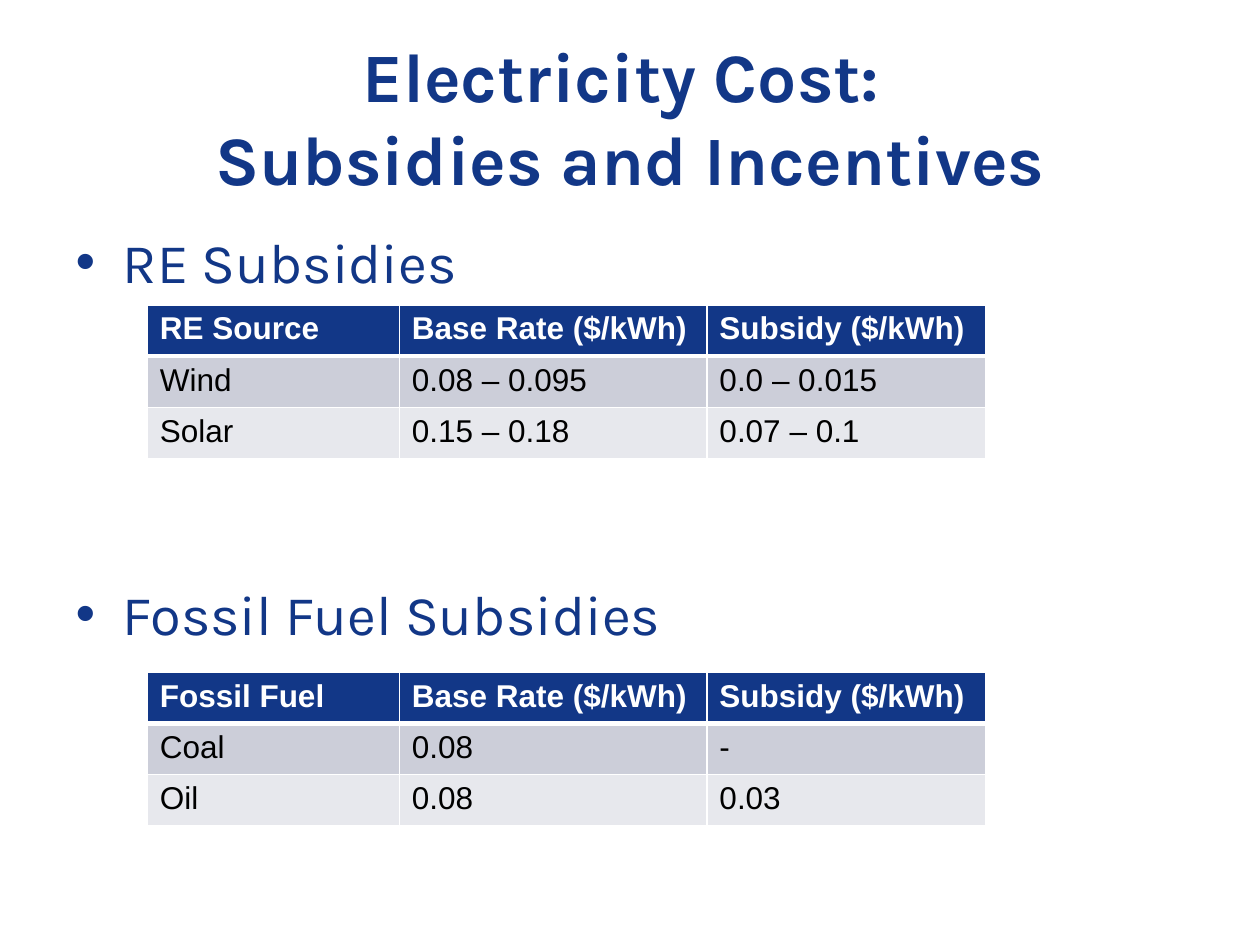
from lxml import etree
from pptx import Presentation
from pptx.dml.color import RGBColor
from pptx.enum.text import MSO_ANCHOR, MSO_AUTO_SIZE, PP_ALIGN
from pptx.oxml.ns import qn
from pptx.util import Cm, Pt

CENTER = PP_ALIGN.CENTER
LEFT = PP_ALIGN.LEFT
MIDDLE = MSO_ANCHOR.MIDDLE
TOP = MSO_ANCHOR.TOP
NO_AUTOFIT = MSO_AUTO_SIZE.NONE

NAVY = RGBColor(0x12, 0x37, 0x87)
WHITE = RGBColor(0xFF, 0xFF, 0xFF)
BLACK = RGBColor(0x00, 0x00, 0x00)
DARK_BAND = RGBColor(0xCC, 0xCE, 0xD9)
LIGHT_BAND = RGBColor(0xE7, 0xE8, 0xED)

HEADING_FONT = "Karla"
TABLE_FONT = "Arial"

COLUMN_WIDTHS = (Cm(5.08), Cm(6.2), Cm(5.63))
ROW_HEIGHT = Cm(1.03)
TABLE_LEFT = Cm(2.97)
BULLET_INDENT = Cm(0.95)
SECTION_GAP = Pt(157)

RATE_HEADINGS = ("Base Rate ($/kWh)", "Subsidy ($/kWh)")
RENEWABLE_RATES = (
    ("RE Source", *RATE_HEADINGS),
    ("Wind", "0.08 – 0.095", "0.0 – 0.015"),
    ("Solar", "0.15 – 0.18", "0.07 – 0.1"),
)
FOSSIL_RATES = (
    ("Fossil Fuel", *RATE_HEADINGS),
    ("Coal", "0.08", "-"),
    ("Oil", "0.08", "0.03"),
)


def write_text(paragraph, text, font, size, color, bold=False, align=LEFT,
               before=Pt(0), after=Pt(0)):
    paragraph.text = text
    paragraph.alignment = align
    paragraph.space_before = before
    paragraph.space_after = after
    for run in paragraph.runs:
        run.font.name = font
        run.font.size = Pt(size)
        run.font.color.rgb = color
        run.font.bold = bold


def place(placeholder, left, top, width, height, anchor):
    """Move a placeholder and return its prepared text frame."""
    placeholder.left, placeholder.top = left, top
    placeholder.width, placeholder.height = width, height
    frame = placeholder.text_frame
    frame.word_wrap = True
    frame.auto_size = NO_AUTOFIT
    frame.vertical_anchor = anchor
    return frame


def add_bullet(paragraph):
    properties = paragraph._p.get_or_add_pPr()
    properties.set("marL", str(BULLET_INDENT))
    properties.set("indent", str(-BULLET_INDENT))
    etree.SubElement(properties, qn("a:buFont"), typeface="Arial")
    etree.SubElement(properties, qn("a:buChar"), char="•")


def add_title(slide, text):
    frame = place(slide.shapes.title, Cm(1.27), Cm(0.76), Cm(22.86), Cm(3.18), MIDDLE)
    write_text(frame.paragraphs[0], text, font=HEADING_FONT, size=39.6,
               color=NAVY, bold=True, align=CENTER)


def add_sections(slide, headings):
    """Write the bulleted headings, with room for a table after each."""
    frame = place(slide.placeholders[1], Cm(1.27), Cm(4.45), Cm(22.86), Cm(12.57), TOP)
    for index, heading in enumerate(headings):
        paragraph = frame.add_paragraph() if index else frame.paragraphs[0]
        add_bullet(paragraph)
        write_text(paragraph, heading, font=HEADING_FONT, size=32, color=NAVY,
                   before=SECTION_GAP if index else Pt(0), after=Pt(6))


def set_borders(cell, top, bottom):
    """Draw white cell borders; top and bottom are widths in points."""
    properties = cell._tc.get_or_add_tcPr()
    for side, width in (("L", 1), ("R", 1), ("T", top), ("B", bottom)):
        line = etree.SubElement(properties, qn(f"a:ln{side}"), w=str(Pt(width)))
        fill = etree.SubElement(line, qn("a:solidFill"))
        etree.SubElement(fill, qn("a:srgbClr"), val=str(WHITE))


def add_rate_table(slide, top, rates):
    table = slide.shapes.add_table(
        len(rates), len(COLUMN_WIDTHS), TABLE_LEFT, top,
        sum(COLUMN_WIDTHS), ROW_HEIGHT * len(rates)).table
    for column, width in zip(table.columns, COLUMN_WIDTHS):
        column.width = width
    for row_index, values in enumerate(rates):
        is_header = row_index == 0
        band = DARK_BAND if row_index % 2 else LIGHT_BAND
        for column_index, value in enumerate(values):
            cell = table.cell(row_index, column_index)
            set_borders(cell, top=3 if row_index == 1 else 1,
                        bottom=3 if is_header else 1)
            cell.fill.solid()
            cell.fill.fore_color.rgb = NAVY if is_header else band
            write_text(cell.text_frame.paragraphs[0], value, font=TABLE_FONT, size=18,
                       color=WHITE if is_header else BLACK, bold=is_header)


def main():
    presentation = Presentation()
    presentation.slide_width = Cm(25.4)
    presentation.slide_height = Cm(19.05)
    slide = presentation.slides.add_slide(presentation.slide_layouts[1])

    add_title(slide, "Electricity Cost: \vSubsidies and Incentives")
    add_sections(slide, ("RE Subsidies", "Fossil Fuel Subsidies"))
    add_rate_table(slide, Cm(6.15), RENEWABLE_RATES)
    add_rate_table(slide, Cm(13.55), FOSSIL_RATES)

    presentation.save("out.pptx")


if __name__ == "__main__":
    main()
